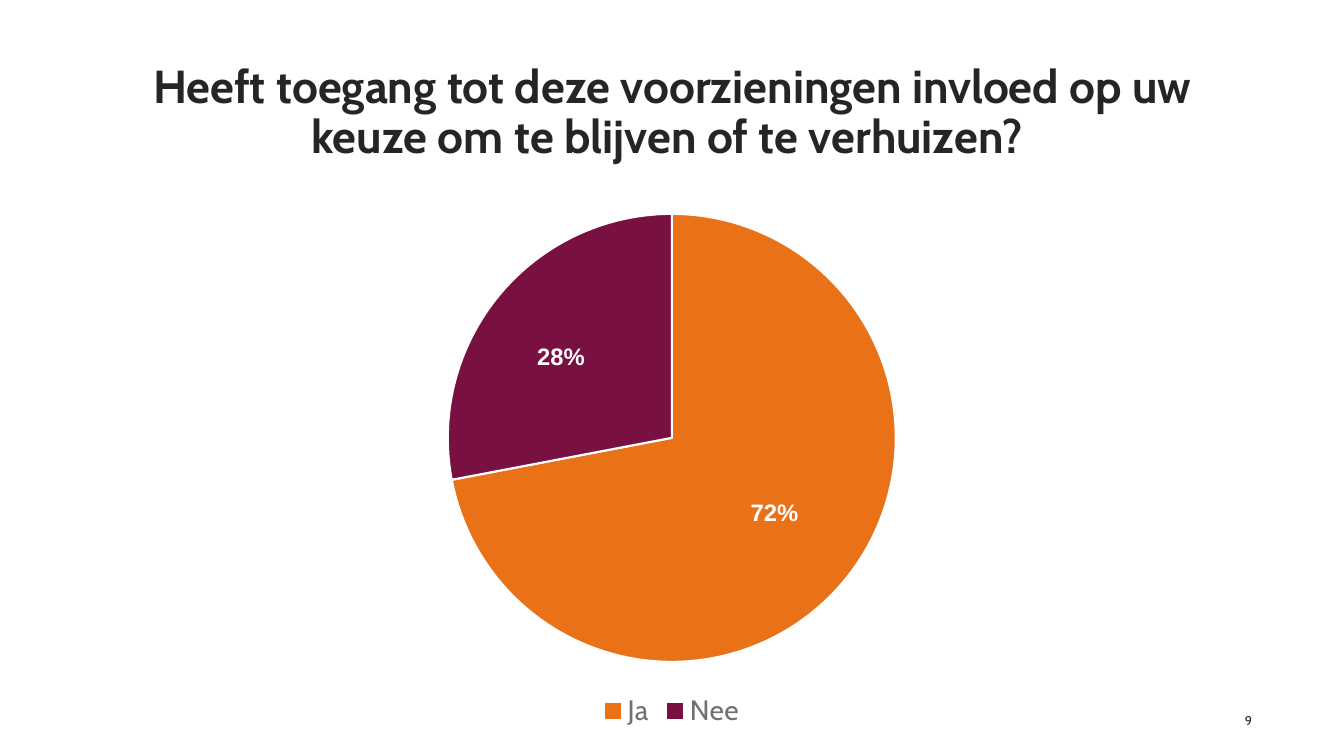
import pptx
import pptx.chart.data
import pptx.dml.color
import pptx.enum.chart
import pptx.enum.text
import pptx.oxml
import pptx.oxml.ns
import pptx.util

Cm = pptx.util.Cm
Pt = pptx.util.Pt
RGBColor = pptx.dml.color.RGBColor
Align = pptx.enum.text.PP_ALIGN
Anchor = pptx.enum.text.MSO_ANCHOR

DARK = RGBColor(0x25, 0x25, 0x25)
GREY = RGBColor(0x71, 0x71, 0x71)
WHITE = RGBColor(0xFF, 0xFF, 0xFF)
ORANGE = RGBColor(0xE9, 0x72, 0x19)
PLUM = RGBColor(0x79, 0x10, 0x42)


def write(frame, text, size=9, font="Cabin", color=DARK, bold=False,
          align=Align.LEFT, space=1.0):
    para = frame.paragraphs[0]
    para.alignment = align
    para.line_spacing = space
    run = para.add_run()
    run.text = text
    run.font.size = Pt(size)
    run.font.name = font
    run.font.bold = bold
    run.font.color.rgb = color


class Deck:
    font = "Cabin"

    def __init__(self):
        self.show = pptx.Presentation()
        self.show.slide_width = Cm(33.87)
        self.show.slide_height = Cm(19.05)
        self.slide = self.show.slides.add_slide(self.show.slide_layouts[6])

    def text(self, box, text, anchor=Anchor.MIDDLE, **style):
        frame = self.slide.shapes.add_textbox(*map(Cm, box)).text_frame
        frame.word_wrap = True
        frame.vertical_anchor = anchor
        frame.margin_left = frame.margin_right = 0
        frame.margin_top = frame.margin_bottom = 0
        write(frame, text, **style)

    def pie(self, box, parts, area):
        data = pptx.chart.data.CategoryChartData()
        data.categories = [name for name, _, _ in parts]
        data.add_series("", [value for _, value, _ in parts])
        kind = pptx.enum.chart.XL_CHART_TYPE.PIE
        chart = self.slide.shapes.add_chart(kind, *map(Cm, box), data).chart
        chart.has_title = False
        chart.font.name = self.font
        chart.font.size = Pt(10)
        chart.font.color.rgb = DARK

        # Slices
        plot = chart.plots[0]
        plot.vary_by_categories = True
        for i, (_, _, color) in enumerate(parts):
            look = plot.series[0].points[i].format
            look.fill.solid()
            look.fill.fore_color.rgb = color
            look.line.color.rgb = WHITE
            look.line.width = Pt(1.5)

        # Legend
        chart.has_legend = True
        legend = chart.legend
        legend.position = pptx.enum.chart.XL_LEGEND_POSITION.BOTTOM
        legend.include_in_layout = False
        legend.font.name = self.font
        legend.font.size = Pt(20)
        legend.font.color.rgb = GREY

        # Fixed plot area, as fractions of the chart
        space = pptx.oxml.ns.nsdecls("c")
        sides = "".join(f'<c:{tag} val="{val}"/>'
                        for tag, val in zip("xywh", area))
        layout = pptx.oxml.parse_xml(
            f'<c:layout {space}><c:manualLayout><c:layoutTarget val="inner"/>'
            f'<c:xMode val="edge"/><c:yMode val="edge"/>{sides}'
            '</c:manualLayout></c:layout>')
        root = chart.element.chart.plotArea
        for old in root.findall(pptx.oxml.ns.qn("c:layout")):
            root.remove(old)
        root.insert(0, layout)


def main():
    deck = Deck()

    # Title and page number
    deck.text((2.34, 2.01, 29.21, 1.7),
              "Heeft toegang tot deze voorzieningen invloed op uw keuze "
              "om te blijven of te verhuizen? ",
              size=33, bold=True, align=Align.CENTER, space=0.9)
    deck.text((23.93, 17.91, 7.62, 0.51), "9", align=Align.RIGHT)

    # Answers
    deck.pie((5.64, 3.43, 22.58, 15.06),
             [("Ja", 72, ORANGE), ("Nee", 28, PLUM)],
             (0.25, 0.13, 0.5, 0.75))

    # Shares
    for left, top, share in ((18.92, 12.52, "72%"), (13.54, 8.59, "28%")):
        deck.text((left, top, 1.6, 0.71), share, anchor=Anchor.TOP, size=17,
                  font="Arial", color=WHITE, bold=True, space=Pt(21))

    deck.show.save("out.pptx")


if __name__ == "__main__":
    main()
